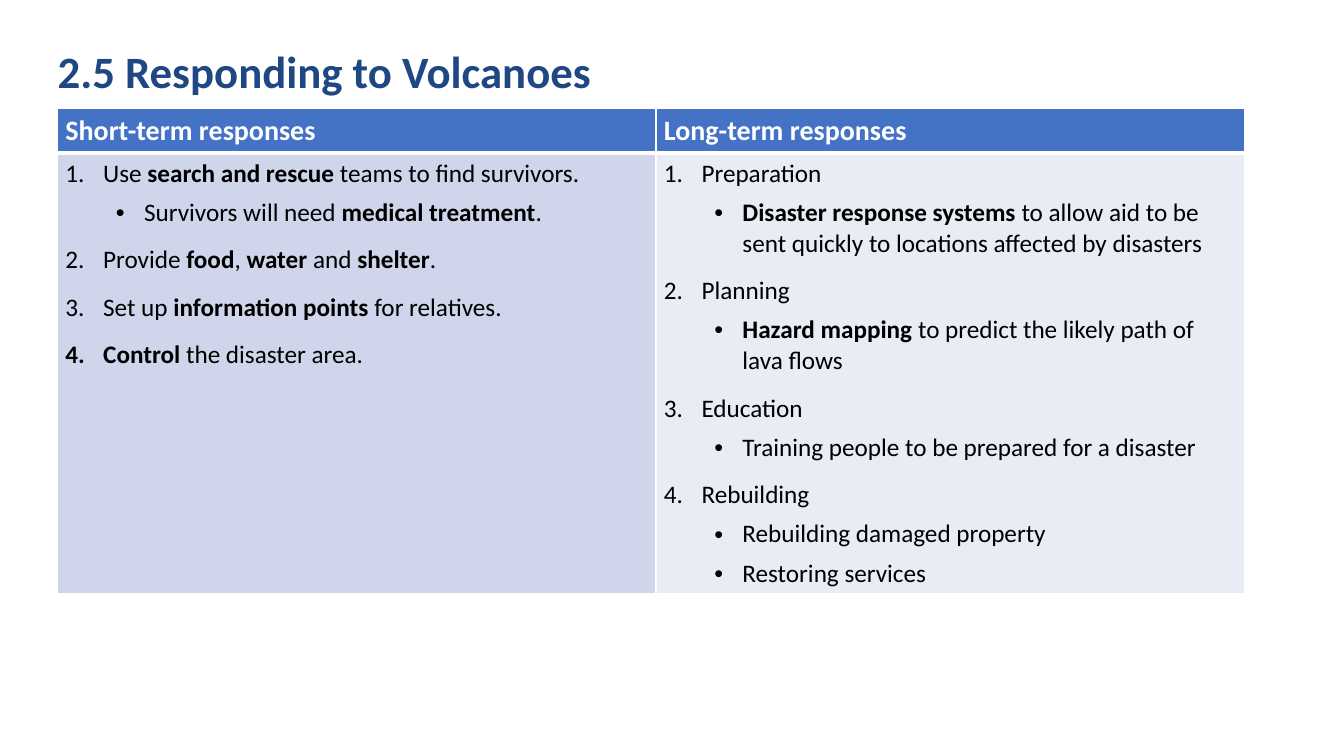
from dataclasses import dataclass

from lxml import etree
from pptx import Presentation
from pptx.dml.color import RGBColor
from pptx.enum import text as t
from pptx.oxml import ns
from pptx.util import Cm, Pt

FONT = "Calibri"
WHITE, BLACK, NAVY, BLUE = "FFFFFF", "000000", "1E4783", "4472C4"


@dataclass
class Point:
    """A list entry; every second part between asterisks is bold."""
    text: str
    after: int = 12
    level: int = 0


@dataclass
class Column:
    heading: str
    width: float
    fill: str
    points: list[Point]
    heading_indent: float = 0


COLUMNS = [
    Column("Short-term responses", 15.08, "CFD5EA", [
        Point("Use *search and rescue *teams to find survivors.", 6),
        Point("Survivors will need *medical treatment*.", level=1),
        Point("Provide *food*, *water* and *shelter*."),
        Point("Set up *information points *for relatives."),
        Point("*Control* the disaster area."),
    ]),
    Column("Long-term responses", 14.84, "E9EBF5", [
        Point("Preparation", 6),
        Point("*Disaster response systems *to allow aid to be sent quickly "
              "to locations affected by disasters", level=1),
        Point("Planning", 6),
        Point("*Hazard mapping *to predict the likely path of lava flows", level=1),
        Point("Education", 6),
        Point("Training people to be prepared for a disaster", level=1),
        Point("Rebuilding", 6),
        Point("Rebuilding damaged property", 6, level=1),
        Point("Restoring services", level=1),
    ], heading_indent=0.99),
]


def rgb(value: str) -> RGBColor:
    return RGBColor.from_string(value)


def child(parent, tag: str, **attributes: str):
    return etree.SubElement(parent, ns.qn(tag), attributes)


def style(font, size: float, color: str, bold: bool) -> None:
    font.name, font.size, font.bold = FONT, Pt(size), bold
    font.color.rgb = rgb(color)


def set_indent(paragraph, left: float, hanging: float):
    properties = paragraph._p.get_or_add_pPr()
    properties.set("marL", str(Cm(left)))
    properties.set("indent", str(-Cm(hanging)))
    return properties


def format_cell(cell, fill: str, bottom_width: float) -> None:
    properties = cell._tc.get_or_add_tcPr()
    for side in "LRTB":
        width = bottom_width if side == "B" else 1
        line = child(properties, f"a:ln{side}", w=str(Pt(width)))
        child(child(line, "a:solidFill"), "a:srgbClr", val=WHITE)
    cell.fill.solid()
    cell.fill.fore_color.rgb = rgb(fill)
    cell.margin_left = cell.margin_right = Cm(0.2)
    cell.margin_top = cell.margin_bottom = Cm(0.13)


def write_point(paragraph, point: Point) -> None:
    sub = point.level > 0
    properties = set_indent(paragraph, 1.98 if sub else 0.95, 0.71 if sub else 0.95)
    child(child(properties, "a:buClr"), "a:srgbClr", val=BLACK)
    if sub:
        child(properties, "a:buFont", typeface="Arial")
        child(properties, "a:buChar", char="•")
    else:
        child(properties, "a:buFont", typeface="+mj-lt")
        child(properties, "a:buAutoNum", type="arabicPeriod")
    paragraph.level = point.level
    paragraph.space_after = Pt(point.after)
    for index, part in enumerate(point.text.split("*")):
        if part:
            run = paragraph.add_run()
            run.text = part
            style(run.font, 18, BLACK, index % 2 == 1)


def add_title(slide, wording: str) -> None:
    title = slide.shapes.title
    title.left, title.top, title.width, title.height = Cm(1.2), Cm(0.99), Cm(29.21), Cm(1.73)
    frame = title.text_frame
    frame.text = wording
    frame.auto_size = t.MSO_AUTO_SIZE.NONE
    frame.vertical_anchor = t.MSO_ANCHOR.MIDDLE
    paragraph = frame.paragraphs[0]
    paragraph.alignment = t.PP_ALIGN.LEFT
    paragraph.line_spacing = 0.9
    style(paragraph.runs[0].font, 32, NAVY, True)


def add_responses(slide, columns: list[Column]) -> None:
    width = sum(column.width for column in columns)
    table = slide.shapes.add_table(2, len(columns), Cm(1.45), Cm(2.73),
                                   Cm(width), Cm(12.06)).table
    table.rows[0].height, table.rows[1].height = Cm(1.1), Cm(10.96)
    for index, column in enumerate(columns):
        table.columns[index].width = Cm(column.width)
        heading, body = table.cell(0, index), table.cell(1, index)
        format_cell(heading, BLUE, 3)
        heading.text_frame.text = column.heading
        paragraph = heading.text_frame.paragraphs[0]
        set_indent(paragraph, column.heading_indent, column.heading_indent)
        style(paragraph.runs[0].font, 20, WHITE, True)
        format_cell(body, column.fill, 1)
        frame = body.text_frame
        for number, point in enumerate(column.points):
            write_point(frame.add_paragraph() if number else frame.paragraphs[0], point)


def main() -> None:
    deck = Presentation()
    deck.slide_width, deck.slide_height = Cm(33.87), Cm(19.05)
    slide = deck.slides.add_slide(deck.slide_layouts[5])
    add_title(slide, "2.5 Responding to Volcanoes")
    add_responses(slide, COLUMNS)
    deck.save("out.pptx")


if __name__ == "__main__":
    main()
